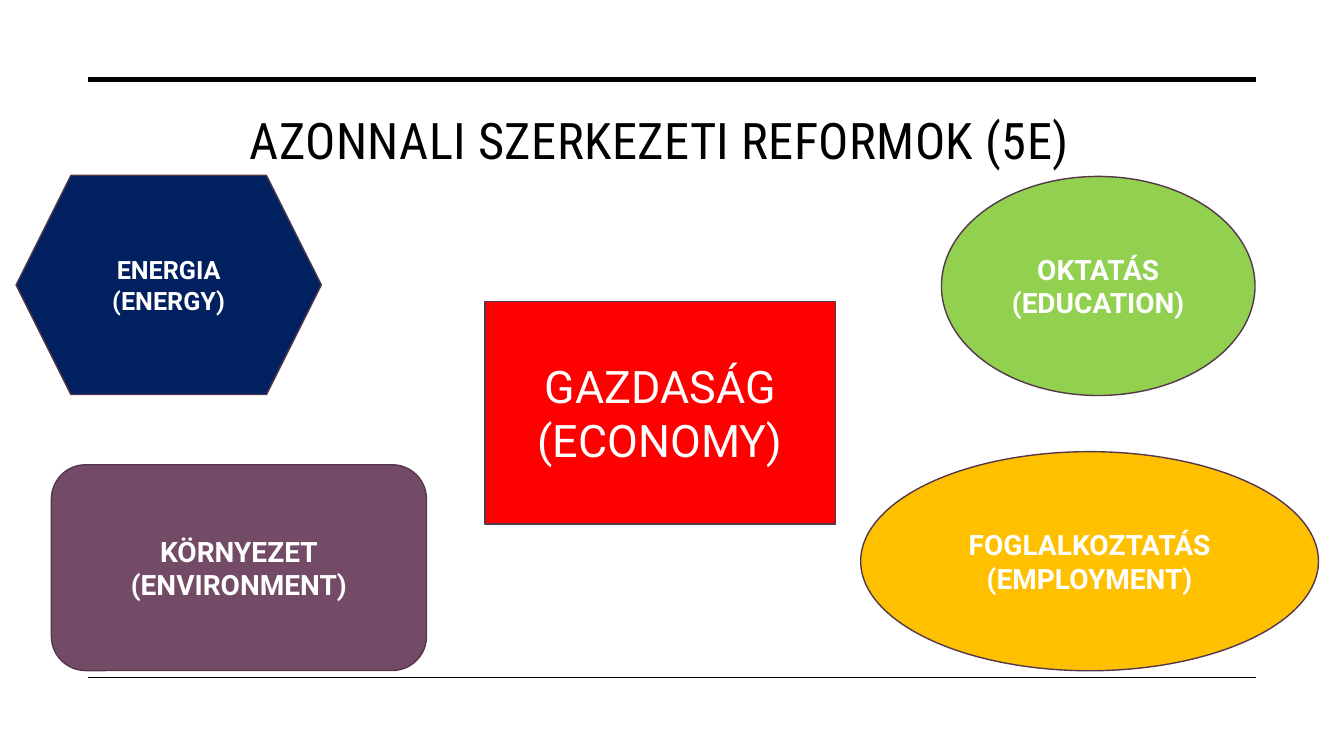
from lxml.etree import SubElement
from pptx import Presentation
from pptx.dml.color import RGBColor
from pptx.enum.shapes import MSO_CONNECTOR, MSO_SHAPE
from pptx.enum.text import MSO_ANCHOR, MSO_AUTO_SIZE, PP_ALIGN
from pptx.oxml.ns import qn
from pptx.util import Pt

BLACK = RGBColor(0x00, 0x00, 0x00)
WHITE = RGBColor(0xFF, 0xFF, 0xFF)
OUTLINE = RGBColor(0x55, 0x37, 0x4C)
GREEN = RGBColor(0x92, 0xD0, 0x50)
NAVY = RGBColor(0x00, 0x20, 0x60)
AMBER = RGBColor(0xFF, 0xC0, 0x00)
RED = RGBColor(0xFF, 0x00, 0x00)
PLUM = RGBColor(0x73, 0x4B, 0x67)


def write_text(frame, text, font="Roboto", size=20, color=WHITE, bold=False, spacing=0):
    """Fill a frame with centred paragraphs, one per line; spacing is in points."""
    frame.word_wrap = True
    frame.auto_size = MSO_AUTO_SIZE.NONE
    frame.vertical_anchor = MSO_ANCHOR.MIDDLE
    frame.text = text
    for paragraph in frame.paragraphs:
        paragraph.alignment = PP_ALIGN.CENTER
        run = paragraph.runs[0]
        run.font.name = font
        run.font.size = Pt(size)
        run.font.bold = bold
        run.font.color.rgb = color
        if spacing:
            run.font._element.set("spc", str(round(spacing * 100)))


presentation = Presentation()
presentation.slide_width = Pt(960)
presentation.slide_height = Pt(540)
slide = presentation.slides.add_slide(presentation.slide_layouts[5])

# Rules above and below the content
for y, width in [(57, 3.5), (484, 1)]:
    rule = slide.shapes.add_connector(MSO_CONNECTOR.STRAIGHT, Pt(63.2), Pt(y), Pt(897), Pt(y))
    rule.line.color.rgb = BLACK
    rule.line.width = Pt(width)
    SubElement(rule._element.spPr, qn("a:effectLst"))

title = slide.shapes.title
title.left, title.top, title.width, title.height = Pt(50.5), Pt(73), Pt(842), Pt(52.5)
write_text(title.text_frame, "AZONNALI SZERKEZETI REFORMOK (5E)",
           font="Roboto Condensed", size=36, color=BLACK, spacing=0.3)

# The five reform areas: preset, left, top, width, height, fill, text, size, bold
reform_areas = [
    (MSO_SHAPE.OVAL, 672.5, 126, 224, 156.5, GREEN, "OKTATÁS\n(EDUCATION)", 20, True),
    (MSO_SHAPE.HEXAGON, 11.5, 125.3, 218, 156.5, NAVY, "ENERGIA\n(ENERGY)", 18, True),
    (MSO_SHAPE.OVAL, 614.8, 322.6, 327, 156.5, AMBER, "FOGLALKOZTATÁS\n(EMPLOYMENT)", 20, True),
    (MSO_SHAPE.RECTANGLE, 346.3, 215.3, 250.5, 159, RED, "GAZDASÁG\n(ECONOMY)", 32, False),
    (MSO_SHAPE.ROUNDED_RECTANGLE, 36.7, 332, 268, 147, PLUM, "KÖRNYEZET\n(ENVIRONMENT)", 20, True),
]
for preset, left, top, width, height, fill, text, size, bold in reform_areas:
    shape = slide.shapes.add_shape(preset, Pt(left), Pt(top), Pt(width), Pt(height))
    shape.shadow.inherit = False
    shape.fill.solid()
    shape.fill.fore_color.rgb = fill
    shape.line.color.rgb = OUTLINE
    shape.line.width = Pt(1)
    write_text(shape.text_frame, text, size=size, bold=bold)

presentation.save("out.pptx")
